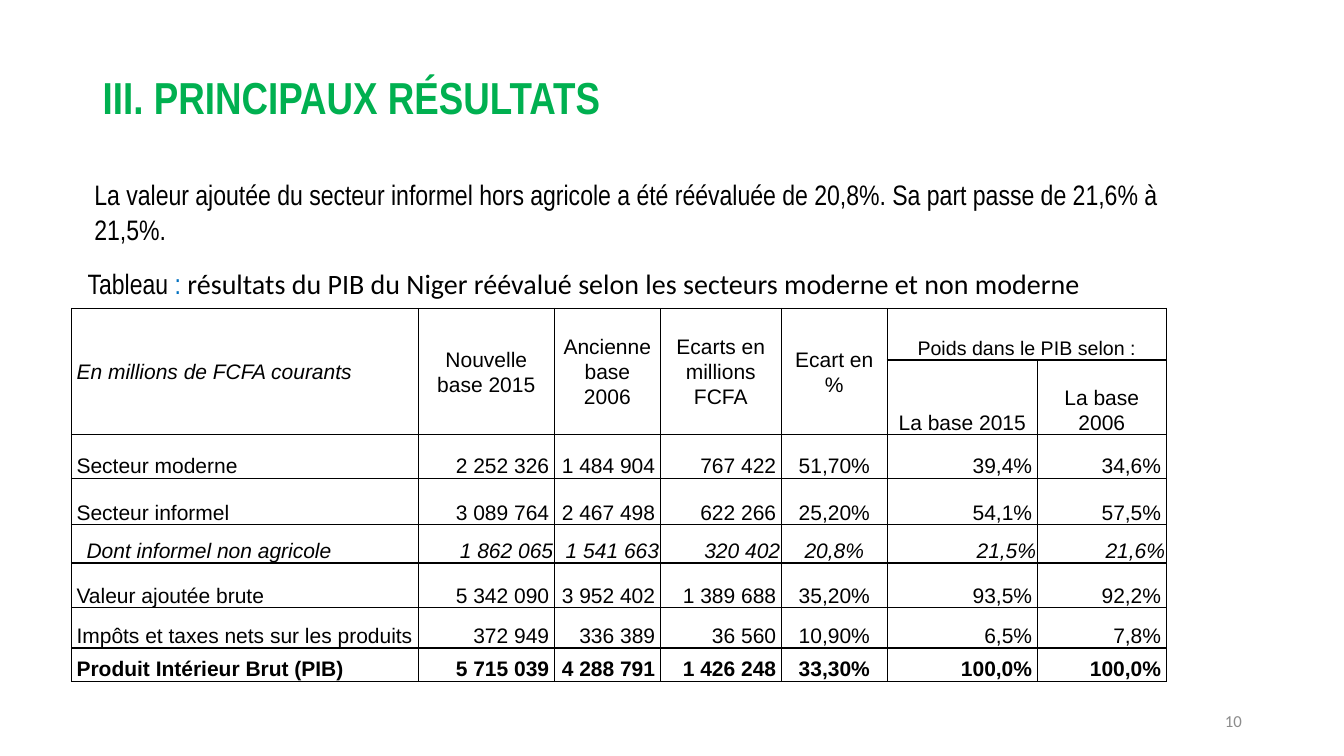
from dataclasses import dataclass, field

import lxml.etree
import pptx
import pptx.dml.color
import pptx.enum.text
import pptx.oxml.ns
import pptx.util

Cm = pptx.util.Cm
Align = pptx.enum.text.PP_ALIGN
Anchor = pptx.enum.text.MSO_ANCHOR

BLACK, GREEN, BLUE, GREY = "000000", "00B050", "0070C0", "8C8C8C"
COLUMN_WIDTHS = (8.74, 3.43, 2.67, 3.05, 2.67, 3.78, 3.25)
ROW_HEIGHTS = (1.3, 1.57, 1.09, 1.17, 0.97, 1.12, 1.02, 0.84)
VALUE_ALIGNMENTS = (Align.LEFT, Align.RIGHT, Align.RIGHT, Align.RIGHT,
                    Align.CENTER, Align.RIGHT, Align.RIGHT)


@dataclass
class Span:
    text: str
    size: float = 15
    font: str = "Arial"
    color: str = BLACK
    bold: bool = False
    italic: bool = False


@dataclass
class TextBox:
    left: float
    top: float
    width: float
    height: float
    spans: list[Span]
    frame_format: dict = field(default_factory=dict)
    para_format: dict = field(default_factory=dict)


@dataclass
class HeaderCell:
    row: int
    column: int
    span: Span
    rows: int = 1
    columns: int = 1
    alignment: Align = Align.CENTER
    anchor: Anchor = Anchor.MIDDLE


@dataclass
class DataRow:
    values: tuple[str, ...]
    bold: bool = False
    italic: bool = False


TEXT_BOXES = [
    TextBox(2.34, 1.02, 29.21, 3.02,
            [Span("III. PRINCIPAUX RÉSULTATS", 32, "Arial Narrow", GREEN, bold=True)],
            {"vertical_anchor": Anchor.MIDDLE}, {"line_spacing": 0.9}),
    TextBox(2.13, 3.63, 28.6, 2.54,
            [Span("La valeur ajoutée du secteur informel hors agricole a été réévaluée "
                  "de 20,8%. Sa part passe de 21,6% à 21,5%.", 20.1, "Arial Narrow")],
            {"margin_top": Cm(0.79)}, {"line_spacing": 1.05}),
    TextBox(23.93, 17.65, 7.62, 1.02, [Span("10", 12, "Calibri", GREY)],
            {"vertical_anchor": Anchor.MIDDLE}, {"alignment": Align.RIGHT}),
    TextBox(1.96, 6.68, 27.48, 1.17,
            [Span("Tableau", 20, "Arial Narrow"),
             Span(" : ", 20, "Arial Narrow", BLUE),
             Span("résultats du PIB du Niger réévalué selon les secteurs moderne "
                  "et non moderne", 20, "Calibri")],
            {}, {"line_spacing": 0.9}),
]

HEADERS = [
    HeaderCell(0, 0, Span("En millions de FCFA courants", italic=True), rows=2,
               alignment=Align.LEFT),
    HeaderCell(0, 1, Span("Nouvelle base 2015"), rows=2),
    HeaderCell(0, 2, Span("Ancienne base 2006"), rows=2),
    HeaderCell(0, 3, Span("Ecarts en millions FCFA"), rows=2),
    HeaderCell(0, 4, Span("Ecart en %"), rows=2),
    HeaderCell(0, 5, Span("Poids dans le PIB selon :", 14), columns=2, anchor=Anchor.BOTTOM),
    HeaderCell(1, 5, Span("La base 2015"), anchor=Anchor.BOTTOM),
    HeaderCell(1, 6, Span("La base 2006"), anchor=Anchor.BOTTOM),
]

DATA_ROWS = [
    DataRow(("Secteur moderne", "2 252 326", "1 484 904", "767 422",
             "51,70%", "39,4%", "34,6%")),
    DataRow(("Secteur informel", "3 089 764", "2 467 498", "622 266",
             "25,20%", "54,1%", "57,5%")),
    DataRow(("Dont informel non agricole", "1 862 065", "1 541 663", "320 402",
             "20,8%", "21,5%", "21,6%"), italic=True),
    DataRow(("Valeur ajoutée brute", "5 342 090", "3 952 402", "1 389 688",
             "35,20%", "93,5%", "92,2%")),
    DataRow(("Impôts et taxes nets sur les produits", "372 949", "336 389", "36 560",
             "10,90%", "6,5%", "7,8%")),
    DataRow(("Produit Intérieur Brut (PIB)", "5 715 039", "4 288 791", "1 426 248",
             "33,30%", "100,0%", "100,0%"), bold=True),
]


def rgb(color: str) -> pptx.dml.color.RGBColor:
    return pptx.dml.color.RGBColor.from_string(color)


def apply_format(target, values: dict) -> None:
    for name, value in values.items():
        setattr(target, name, value)


def write_spans(para, spans: list[Span], para_format: dict) -> None:
    apply_format(para, para_format)
    for span in spans:
        run = para.add_run()
        run.text = span.text
        apply_format(run.font, {"size": pptx.util.Pt(span.size), "name": span.font,
                                "bold": span.bold, "italic": span.italic})
        run.font.color.rgb = rgb(span.color)


def add_text_box(page, item: TextBox) -> None:
    box = page.shapes.add_textbox(Cm(item.left), Cm(item.top), Cm(item.width), Cm(item.height))
    apply_format(box.text_frame, {"word_wrap": True, **item.frame_format})
    write_spans(box.text_frame.paragraphs[0], item.spans, item.para_format)


def add_borders(cell, color: str = BLACK, width: int = 12700) -> None:
    properties = cell._tc.get_or_add_tcPr()
    qn = pptx.oxml.ns.qn
    for side in ("a:lnL", "a:lnR", "a:lnT", "a:lnB"):
        line = lxml.etree.SubElement(properties, qn(side), w=str(width))
        fill = lxml.etree.SubElement(line, qn("a:solidFill"))
        lxml.etree.SubElement(fill, qn("a:srgbClr"), val=color)


def write_cell(cell, span: Span, alignment: Align, anchor: Anchor,
               left: float = 0.13, right: float = 0.13) -> None:
    apply_format(cell, {"vertical_anchor": anchor, "margin_left": Cm(left),
                        "margin_right": Cm(right), "margin_top": 0, "margin_bottom": 0})
    write_spans(cell.text_frame.paragraphs[0], [span],
                {"alignment": alignment, "line_spacing": 1.07})


def add_results_table(page) -> None:
    table = page.shapes.add_table(
        len(ROW_HEIGHTS), len(COLUMN_WIDTHS), Cm(1.8), Cm(7.77),
        Cm(sum(COLUMN_WIDTHS)), Cm(sum(ROW_HEIGHTS))).table
    apply_format(table, {"first_row": False, "horz_banding": False})
    for column, width in zip(table.columns, COLUMN_WIDTHS):
        column.width = Cm(width)
    for row, height in zip(table.rows, ROW_HEIGHTS):
        row.height = Cm(height)
    for cell in table.iter_cells():
        add_borders(cell)
        cell.fill.background()

    for header in HEADERS:
        cell = table.cell(header.row, header.column)
        if header.rows > 1 or header.columns > 1:
            cell.merge(table.cell(header.row + header.rows - 1,
                                  header.column + header.columns - 1))
        write_cell(cell, header.span, header.alignment, header.anchor)

    for row_index, row in enumerate(DATA_ROWS, start=2):
        for column_index, (value, alignment) in enumerate(zip(row.values, VALUE_ALIGNMENTS)):
            left = right = 0.03 if row.italic else 0.13
            if row.italic and column_index == 0:
                left = 0.38
            write_cell(table.cell(row_index, column_index),
                       Span(value, bold=row.bold, italic=row.italic),
                       alignment, Anchor.BOTTOM, left, right)


def main() -> None:
    deck = pptx.Presentation()
    apply_format(deck, {"slide_width": Cm(33.87), "slide_height": Cm(19.05)})
    page = deck.slides.add_slide(deck.slide_layouts[6])
    add_results_table(page)
    for item in TEXT_BOXES:
        add_text_box(page, item)
    deck.save("out.pptx")


if __name__ == "__main__":
    main()
